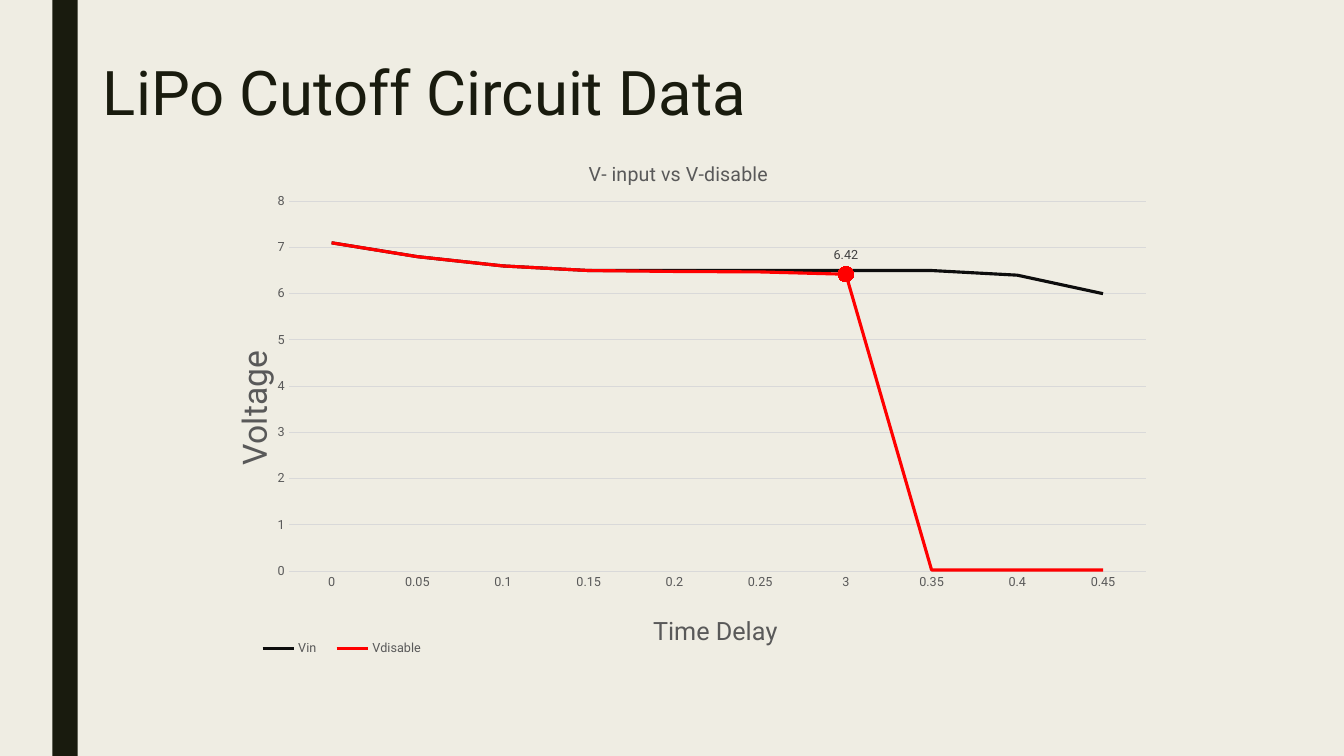
from dataclasses import dataclass

from lxml.etree import SubElement
from pptx import Presentation
from pptx.chart.axis import CategoryAxis, ValueAxis
from pptx.chart.chart import Chart
from pptx.chart.data import CategoryChartData
from pptx.chart.series import LineSeries
from pptx.dml.color import RGBColor
from pptx.dml.line import LineFormat
from pptx.enum.chart import (XL_CHART_TYPE, XL_LABEL_POSITION, XL_LEGEND_POSITION,
                             XL_MARKER_STYLE, XL_TICK_MARK)
from pptx.enum.shapes import MSO_SHAPE
from pptx.enum.text import MSO_ANCHOR, PP_ALIGN
from pptx.oxml.ns import qn
from pptx.slide import Slide
from pptx.text.text import Font, TextFrame
from pptx.util import Cm, Pt

FACE = "Roboto"
CREAM = RGBColor(0xEF, 0xED, 0xE3)
OLIVE = RGBColor(0x19, 0x1B, 0x0E)
GREY = RGBColor(0x59, 0x59, 0x59)
DARK = RGBColor(0x40, 0x40, 0x40)
PALE = RGBColor(0xD9, 0xD9, 0xD9)
BLACK = RGBColor(0x0D, 0x0D, 0x0D)
RED = RGBColor(0xFF, 0x00, 0x00)

DELAYS = [0, 0.05, 0.1, 0.15, 0.2, 0.25, 3, 0.35, 0.4, 0.45]
CUTOFF = DELAYS.index(3)


@dataclass
class Curve:
    name: str
    color: RGBColor
    volts: list[float]


@dataclass
class Place:
    """Position of a chart part, as fractions of the chart."""
    query: str
    after: str
    box: dict[str, float]


CURVES = [
    Curve("Vin", BLACK, [7.1, 6.8, 6.6, 6.5, 6.5, 6.5, 6.5, 6.5, 6.4, 6]),
    Curve("Vdisable", RED,
          [7.1, 6.8, 6.6, 6.5, 6.48, 6.47, 6.42, 0.026, 0.026, 0.025]),
]
PLACES = [
    Place("c:chart/c:title", "c:tx", {"x": 0.41, "y": 0.04}),
    Place(".//c:catAx/c:title", "c:tx", {"x": 0.47, "y": 0.86}),
    Place(".//c:valAx/c:title", "c:tx", {"x": 0.07, "y": 0.38}),
    Place(".//c:plotArea", "", {"x": 0.13, "y": 0.12, "w": 0.81, "h": 0.67}),
    Place(".//c:legend", "c:legendPos", {"x": 0.09, "y": 0.9, "w": 0.18, "h": 0.06}),
]


def style(font: Font, size: float, color: RGBColor) -> None:
    font.name = FACE
    font.size = Pt(size)
    font.bold = False
    font.color.rgb = color


def write(frame: TextFrame, text: str, size: float, color: RGBColor) -> None:
    frame.text = text
    style(frame.paragraphs[0].font, size, color)


def stroke(line: LineFormat, color: RGBColor, width: float) -> None:
    line.color.rgb = color
    line.width = Pt(width)


def place(chart: Chart, spot: Place) -> None:
    owner = chart.element.xpath(spot.query)[0]
    for old in owner.findall(qn("c:layout")):
        owner.remove(old)
    layout = SubElement(owner, qn("c:layout"))
    manual = SubElement(layout, qn("c:manualLayout"))
    if not spot.after:
        SubElement(manual, qn("c:layoutTarget")).set("val", "inner")
    for side in "xy":
        SubElement(manual, qn(f"c:{side}Mode")).set("val", "edge")
    for side, value in spot.box.items():
        SubElement(manual, qn(f"c:{side}")).set("val", str(value))
    if spot.after:
        owner.find(qn(spot.after)).addnext(layout)
    else:
        owner.insert(0, layout)


def set_axis(axis: CategoryAxis | ValueAxis, title: str, size: float) -> None:
    write(axis.axis_title.text_frame, title, size, GREY)
    axis.major_tick_mark = axis.minor_tick_mark = XL_TICK_MARK.NONE
    style(axis.tick_labels.font, 9, GREY)


def mark(series: LineSeries, index: int, color: RGBColor) -> None:
    """Show one point with a round marker and its value."""
    series.data_labels.show_value = False
    point = series.points[index]
    stroke(point.format.line, color, 2.25)
    point.marker.style = XL_MARKER_STYLE.CIRCLE
    point.marker.size = 11
    point.marker.format.fill.solid()
    point.marker.format.fill.fore_color.rgb = color
    point.marker.format.line.color.rgb = color
    style(point.data_label.font, 9, DARK)
    point.data_label.position = XL_LABEL_POSITION.ABOVE


def add_plot(slide: Slide) -> None:
    data = CategoryChartData()
    data.categories = DELAYS
    for curve in CURVES:
        data.add_series(curve.name, curve.volts)
    chart = slide.shapes.add_chart(XL_CHART_TYPE.LINE, Cm(3.81), Cm(3.4),
                                   Cm(26.67), Cm(13.92), data).chart
    style(chart.font, 10, GREY)
    write(chart.chart_title.text_frame, "V- input vs V-disable", 14, GREY)

    # Axes
    delay, volt = chart.category_axis, chart.value_axis
    set_axis(delay, "Time Delay", 18)
    set_axis(volt, "Voltage", 24)
    stroke(delay.format.line, PALE, 0.75)
    volt.format.line.fill.background()
    stroke(volt.major_gridlines.format.line, PALE, 0.75)
    volt.minimum_scale, volt.maximum_scale, volt.major_unit = 0, 8, 1
    turn = chart.element.xpath(".//c:valAx/c:title//a:bodyPr")[0]
    turn.set("rot", "-5400000")
    turn.set("vert", "horz")

    # Curves
    chart.plots[0].vary_by_categories = False
    for series, curve in zip(chart.plots[0].series, CURVES):
        series.smooth = False
        series.marker.style = XL_MARKER_STYLE.NONE
        stroke(series.format.line, curve.color, 2.25)
    mark(chart.plots[0].series[1], CUTOFF, RED)

    # Legend and positions
    chart.has_legend = True
    chart.legend.position = XL_LEGEND_POSITION.BOTTOM
    chart.legend.include_in_layout = False
    style(chart.legend.font, 9, GREY)
    for spot in PLACES:
        place(chart, spot)


def main() -> None:
    deck = Presentation()
    deck.slide_width, deck.slide_height = Cm(33.87), Cm(19.05)
    slide = deck.slides.add_slide(deck.slide_layouts[5])
    slide.background.fill.solid()
    slide.background.fill.fore_color.rgb = CREAM

    # Side band
    band = slide.shapes.add_shape(MSO_SHAPE.RECTANGLE, Cm(1.32), 0,
                                  Cm(0.64), deck.slide_height)
    band.shadow.inherit = False
    band.fill.solid()
    band.fill.fore_color.rgb = OLIVE
    band.line.fill.background()

    # Title
    title = slide.shapes.title
    title.left, title.top = Cm(2.34), Cm(1.4)
    title.width, title.height = Cm(29.21), Cm(2.01)
    write(title.text_frame, "LiPo Cutoff Circuit Data", 44, OLIVE)
    title.text_frame.vertical_anchor = MSO_ANCHOR.MIDDLE
    title.text_frame.paragraphs[0].alignment = PP_ALIGN.LEFT
    title.text_frame.paragraphs[0].line_spacing = 0.89

    add_plot(slide)
    deck.save("out.pptx")


if __name__ == "__main__":
    main()
